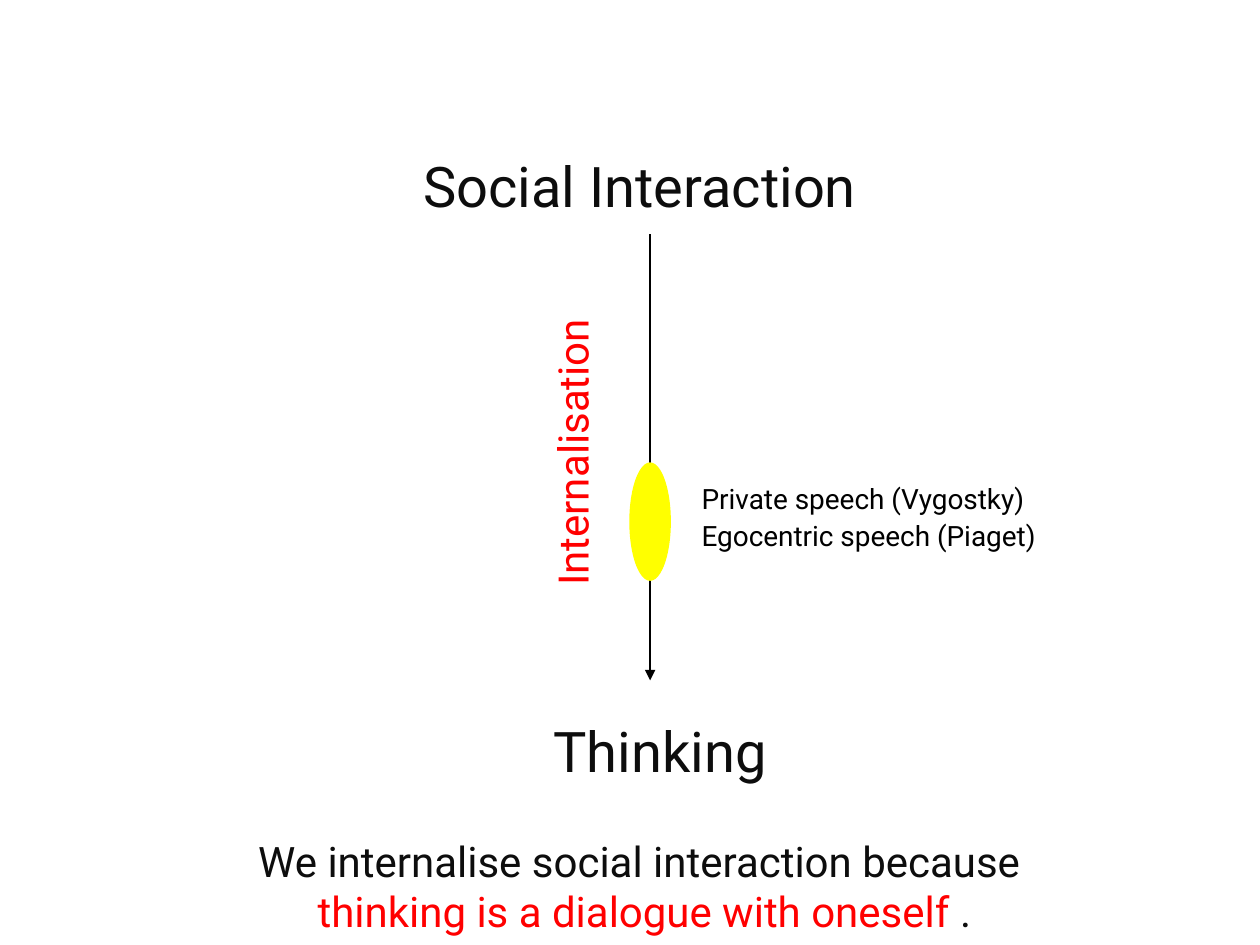
import pptx
import pptx.util
import pptx.dml.color
import pptx.enum.shapes
import pptx.enum.text
import pptx.oxml
from pptx.oxml.ns import qn

WIDTH, HEIGHT = 10, 7.5
FONT = "Roboto"
INK, RED, BLACK, YELLOW = "0D0D0D", "FF0000", "000000", "FFFF00"
AXIS = 0.516 * WIDTH
CENTER = pptx.enum.text.PP_ALIGN.CENTER
LEFT = pptx.enum.text.PP_ALIGN.LEFT


def color(hex_code):
    return pptx.dml.color.RGBColor.from_string(hex_code)


def inches(*lengths):
    return [pptx.util.Inches(length) for length in lengths]


def add_label(slide, area, lines, size, align=CENTER, spacing=None, rotation=0):
    """Add text whose lines are lists of (wording, hex colour) pairs."""
    label = slide.shapes.add_textbox(*inches(*area))
    label.rotation = rotation
    frame = label.text_frame
    frame.word_wrap = True
    frame.auto_size = pptx.enum.text.MSO_AUTO_SIZE.SHAPE_TO_FIT_TEXT
    frame.text = "\n".join("".join(words for words, _ in line) for line in lines)
    for paragraph, line in zip(frame.paragraphs, lines):
        paragraph.alignment = align
        paragraph.line_spacing = spacing
        paragraph.runs[0].text = line[0][0]
        for words, _ in line[1:]:
            paragraph.add_run().text = words
        for run, (_, hex_code) in zip(paragraph.runs, line):
            run.font.name = FONT
            run.font.size = pptx.util.Pt(size)
            run.font.color.rgb = color(hex_code)


def add_arrow(slide, x, top, bottom):
    arrow = slide.shapes.add_connector(
        pptx.enum.shapes.MSO_CONNECTOR.STRAIGHT, *inches(x, top, x, bottom))
    arrow.line.color.rgb = color(BLACK)
    arrow.line.width = pptx.util.Pt(0.75)
    head = pptx.oxml.parse_xml(
        '<a:tailEnd xmlns:a="http://schemas.openxmlformats.org/drawingml/2006/main"'
        ' type="triangle"/>')
    arrow.line._get_or_add_ln().append(head)
    properties = arrow._element.spPr
    properties.append(properties.makeelement(qn("a:effectLst"), {}))


def add_stage(slide, center_x, top, width, height):
    """Mark a stage on the arrow with an ellipse."""
    stage = slide.shapes.add_shape(
        pptx.enum.shapes.MSO_SHAPE.OVAL,
        *inches(center_x - width / 2, top, width, height))
    stage.shadow.inherit = False
    stage.fill.solid()
    stage.fill.fore_color.rgb = color(YELLOW)
    stage.line.fill.background()


def main():
    deck = pptx.Presentation()
    deck.slide_width, deck.slide_height = inches(WIDTH, HEIGHT)
    slide = deck.slides.add_slide(deck.slide_layouts[6])

    add_label(slide, (2.48, 1.15, 5.2, 0.55), [[("Social Interaction", INK)]], 32)
    add_label(slide, (2.64, 5.64, 5.2, 0.55), [[("Thinking", INK)]], 32)
    add_arrow(slide, AXIS, 1.86, 0.72 * HEIGHT)
    add_label(slide, (2.78, 3.37, 3.46, 0.44), [[("Internalisation", RED)]], 24,
              rotation=270)
    conclusion = [
        [("We internalise social interaction because ", INK)],
        [("thinking is a dialogue with oneself ", RED), (".", INK)],
    ]
    add_label(slide, (0.35, 6.58, 9.53, 0.84), conclusion, 24)
    add_stage(slide, AXIS, 3.67, 0.33, 0.94)
    speech_forms = [
        [("Private speech (Vygostky)", BLACK)],
        [("Egocentric speech (Piaget)", BLACK)],
    ]
    add_label(slide, (5.47, 3.75, 3.46, 0.74), speech_forms, 16,
              align=LEFT, spacing=1.1)
    deck.save("out.pptx")


if __name__ == "__main__":
    main()
